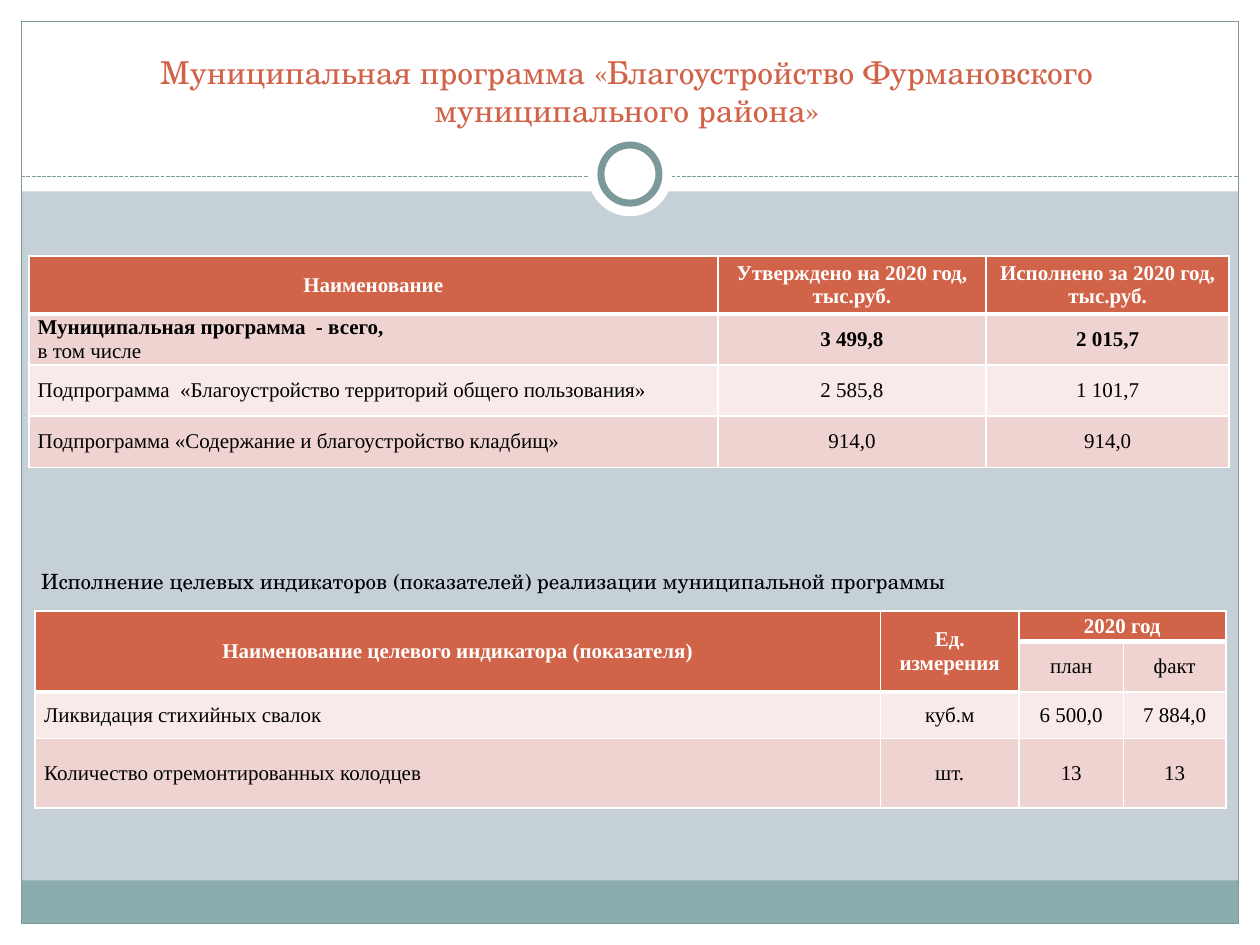
from lxml.etree import SubElement
from pptx import Presentation
from pptx.dml.color import RGBColor
from pptx.enum.dml import MSO_LINE
from pptx.enum.shapes import MSO_CONNECTOR, MSO_SHAPE as Shape
from pptx.enum.text import MSO_ANCHOR as Anchor, PP_ALIGN as Align
from pptx.oxml import parse_xml
from pptx.oxml.ns import nsdecls, qn
from pptx.util import Cm, Pt

WHITE, BLACK, ACCENT, TEAL = "FFFFFF", "000000", "D16349", "7C999A"
BANDS = ["EED3D0", "F7EAE9"]
SCHOOL, TIMES = "TeX Gyre Schola", "Times New Roman"
WIDTH, HEIGHT, MARGIN = 25.4, 19.05, 0.43


def color(hex_code):
    return RGBColor.from_string(hex_code)


def write(frame, text, size=12, font=TIMES, ink=BLACK, bold=False, align=Align.LEFT):
    """Write one paragraph per line; bold is one flag or one per line."""
    frame.word_wrap = True
    lines = text.split("\n")
    weights = bold if isinstance(bold, list) else [bold] * len(lines)
    for number, (line, weight) in enumerate(zip(lines, weights)):
        paragraph = frame.add_paragraph() if number else frame.paragraphs[0]
        paragraph.alignment = align
        run = paragraph.add_run()
        run.text = line
        run.font.size, run.font.name, run.font.bold = Pt(size), font, weight
        run.font.color.rgb = color(ink)


def add_text(slide, box, text, anchor=Anchor.TOP, **style):
    frame = slide.shapes.add_textbox(*map(Cm, box)).text_frame
    frame.vertical_anchor = anchor
    write(frame, text, **style)


def add_figure(slide, box, kind=Shape.RECTANGLE, fill=None, line=None, weight=0.75):
    figure = slide.shapes.add_shape(kind, *map(Cm, box))
    figure.shadow.inherit = False
    if fill:
        figure.fill.solid()
        figure.fill.fore_color.rgb = color(fill)
    else:
        figure.fill.background()
    if line:
        figure.line.color.rgb = color(line)
        figure.line.width = Pt(weight)
    else:
        figure.line.fill.background()


def add_frame(slide, box):
    """White margins, footer strip, outline, dashed rule and ring."""
    left, top, width, height = box
    right, bottom = left + width, top + height
    for edge in [(0, bottom, WIDTH, HEIGHT - bottom), (0, 0, WIDTH, 3.86),
                 (0, 0, left, HEIGHT), (right, 0, WIDTH - right, HEIGHT)]:
        add_figure(slide, edge, fill=WHITE)
    add_figure(slide, (left, bottom - 0.87, width, 0.87), fill="8CADAE")
    add_figure(slide, box, line=TEAL)

    rule_y = Cm(top + 3.13)
    rule = slide.shapes.add_connector(MSO_CONNECTOR.STRAIGHT, Cm(left), rule_y,
                                      Cm(right), rule_y)
    rule.line.color.rgb = color(TEAL)
    rule.line.width = Pt(0.75)
    rule.line.dash_style = MSO_LINE.SQUARE_DOT
    SubElement(rule._element.spPr, qn("a:effectLst"))

    center_x, center_y = left + width / 2, top + 3.08
    for size, line in [(1.7, None), (1.17, TEAL)]:
        ring = (center_x - size / 2, center_y - size / 2, size, size)
        add_figure(slide, ring, Shape.OVAL, WHITE, line, 4)


def set_borders(cell, top, bottom):
    properties = cell._tc.get_or_add_tcPr()
    for place, (side, weight) in enumerate([("L", 1), ("R", 1), ("T", top), ("B", bottom)]):
        properties.insert(place, parse_xml(
            f'<a:ln{side} {nsdecls("a")} w="{Pt(weight)}"><a:solidFill>'
            f'<a:srgbClr val="{WHITE}"/></a:solidFill></a:ln{side}>'))


def add_table(slide, corner, columns, heights, rows, header_depths, merges=(),
              first_align=Align.LEFT, bold_cells=None):
    """Banded table; header_depths gives the number of header rows per column."""
    bold_cells = bold_cells or {}
    box = (*corner, sum(columns), sum(heights))
    table = slide.shapes.add_table(len(rows), len(columns), *map(Cm, box)).table
    table.first_row = table.horz_banding = False
    for column, width in zip(table.columns, columns):
        column.width = Cm(width)
    for row, height in zip(table.rows, heights):
        row.height = Cm(height)
    for r, texts in enumerate(rows):
        for c, text in enumerate(texts):
            cell, depth = table.cell(r, c), header_depths[c]
            header = r < depth
            cell.margin_left = cell.margin_right = Cm(0.18)
            cell.margin_top = cell.margin_bottom = 0
            cell.vertical_anchor = Anchor.MIDDLE
            cell.fill.solid()
            cell.fill.fore_color.rgb = color(ACCENT if header else BANDS[(r - 1) % 2])
            set_borders(cell, 3 if r == depth else 1, 3 if header else 1)
            if text:
                write(cell.text_frame, text, ink=WHITE if header else BLACK,
                      bold=header or bold_cells.get((r, c), False),
                      align=Align.CENTER if header or c else first_align)
    for start, end in merges:
        table.cell(*start).merge(table.cell(*end))


def add_budget(slide, left, top):
    add_table(
        slide, (left, top), [13.89, 5.41, 4.9], [1.17, 1.03, 1.03, 1.03],
        [["Наименование", "Утверждено на 2020 год, тыс.руб.", "Исполнено за 2020 год, тыс.руб."],
         ["Муниципальная программа  - всего,\nв том числе", "3 499,8", "2 015,7"],
         ["Подпрограмма  «Благоустройство территорий общего пользования»", "2 585,8", "1 101,7"],
         ["Подпрограмма «Содержание и благоустройство кладбищ»", "914,0", "914,0"]],
        header_depths=[1, 1, 1], first_align=Align.JUSTIFY,
        bold_cells={(1, 0): [True, False], (1, 1): True, (1, 2): True})


def add_indicators(slide, left, top):
    add_text(slide, (left, top, 23.62, 0.99),
             "Исполнение целевых индикаторов (показателей) реализации муниципальной программы",
             font=SCHOOL)
    add_table(
        slide, (left + 0.13, top + 0.99), [17.04, 2.79, 2.11, 2.06], [0.61, 0.94, 0.94, 1.4],
        [["Наименование целевого индикатора (показателя)", "Ед. измерения", "2020 год", ""],
         ["", "", "план", "факт"],
         ["Ликвидация стихийных свалок", "куб.м", "6 500,0", "7 884,0"],
         ["Количество отремонтированных колодцев", "шт.", "13", "13"]],
        header_depths=[2, 2, 1, 1],
        merges=[((0, 0), (1, 0)), ((0, 1), (1, 1)), ((0, 2), (0, 3))])


def main():
    deck = Presentation()
    deck.slide_width, deck.slide_height = Cm(WIDTH), Cm(HEIGHT)
    slide = deck.slides.add_slide(deck.slide_layouts[6])
    slide.background.fill.solid()
    slide.background.fill.fore_color.rgb = color("C5D1D7")
    add_frame(slide, (MARGIN, MARGIN, WIDTH - 2 * MARGIN, HEIGHT - 2 * MARGIN))
    # Title
    add_text(slide, (0.79, 0.94, 23.7, 1.78),
             "Муниципальная программа «Благоустройство Фурмановского муниципального района»",
             anchor=Anchor.BOTTOM, size=18, font=SCHOOL, ink=ACCENT, align=Align.CENTER)
    # Tables
    add_budget(slide, 0.58, 5.16)
    add_indicators(slide, 0.58, 11.33)
    deck.save("out.pptx")


if __name__ == "__main__":
    main()
